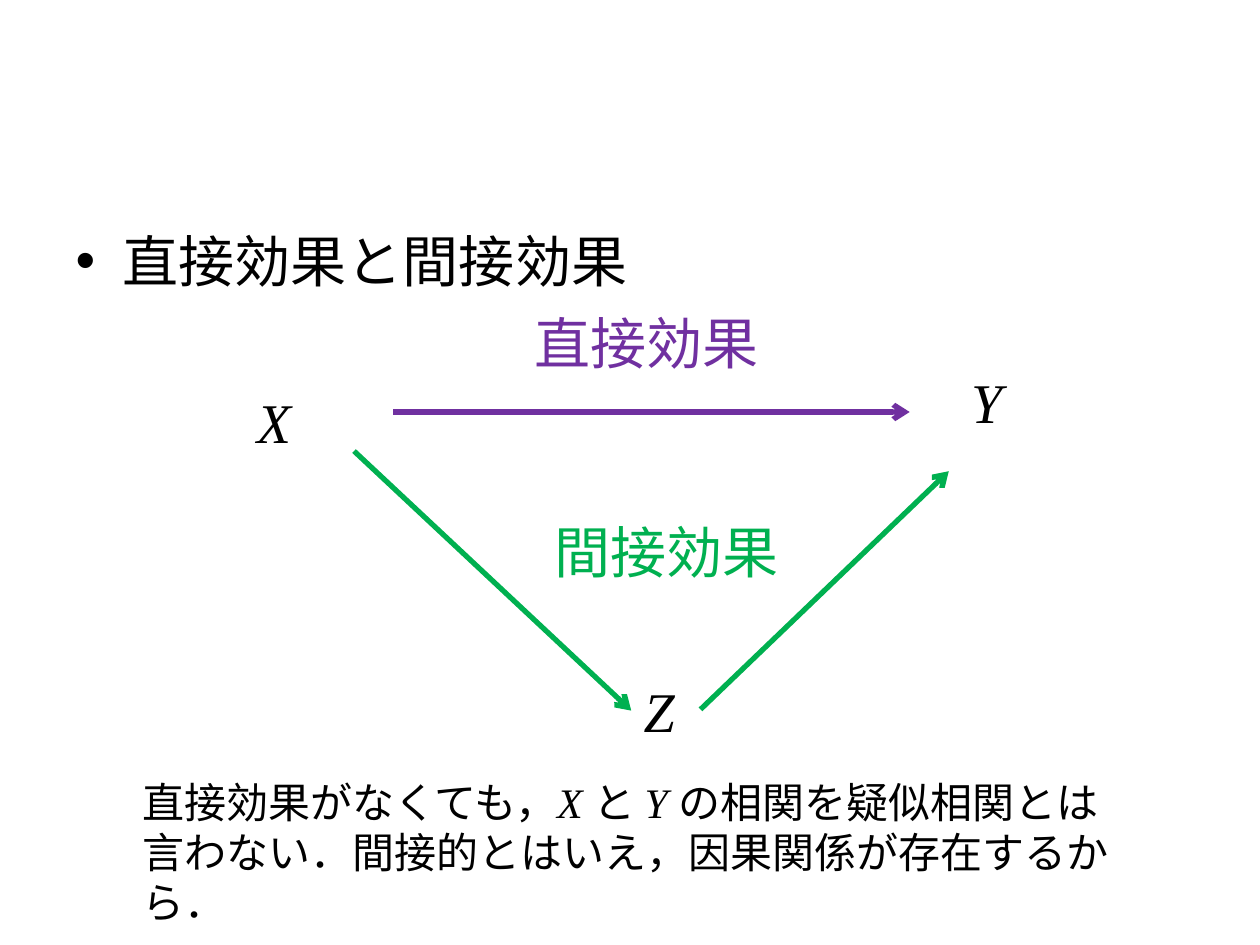
from lxml import etree
from pptx import Presentation
from pptx import util as u
from pptx.dml.color import RGBColor
from pptx.enum import shapes, text
from pptx.oxml.ns import qn

WIDTH, HEIGHT = 10, 7.5
BLACK, PURPLE, GREEN = "000000", "7030A0", "00B050"
SANS, SERIF = "Calibri", "Times New Roman"

HEADING = "直接効果と間接効果"
NODES = [("X", 1.94, 3.03, 0.48), ("Z", 5.01, 5.32, 0.45), ("Y", 7.61, 2.87, 0.45)]
EFFECTS = [("直接効果", 4.14, 2.4, PURPLE), ("間接効果", 4.3, 4.06, GREEN)]
ARROWS = [
    ((2.81, 3.58), (5.01, 5.64), GREEN),
    ((5.56, 5.63), (7.53, 3.74), GREEN),
    ((3.12, 3.27), (7.22, 3.27), PURPLE),
]
REMARK = [
    ("直接効果がなくても，", False),
    ("X ", True),
    ("と ", False),
    ("Y ", True),
    ("の相関を疑似相関とは言わない．間接的とはいえ，因果関係が存在するから．", False),
]


def rgb(value):
    """Turn a hex string into a colour."""
    return RGBColor.from_string(value)


def add_span(para, words, size=32, color=BLACK, variable=False):
    """Add a run; variables are set in italic serif."""
    span = para.add_run()
    span.text = words
    span.font.size = u.Pt(size)
    span.font.name = SERIF if variable else SANS
    span.font.italic = variable
    span.font.color.rgb = rgb(color)


def add_box(page, left, top, width, height, spans, wrap=False, **style):
    """Add a text box holding one paragraph of (words, variable) spans."""
    box = page.shapes.add_textbox(*map(u.Inches, (left, top, width, height)))
    box.text_frame.word_wrap = wrap
    box.text_frame.auto_size = text.MSO_AUTO_SIZE.SHAPE_TO_FIT_TEXT
    for words, variable in spans:
        add_span(box.text_frame.paragraphs[0], words, variable=variable, **style)


def add_arrow(page, start, end, color):
    """Add a straight line with an open arrowhead at its end."""
    arrow = page.shapes.add_connector(
        shapes.MSO_CONNECTOR.STRAIGHT, *map(u.Inches, start + end))
    arrow.line.color.rgb = rgb(color)
    arrow.line.width = u.Pt(3)
    etree.SubElement(arrow.line._get_or_add_ln(), qn("a:tailEnd"), type="arrow")
    etree.SubElement(arrow._element.spPr, qn("a:effectLst"))


def main():
    """Build the slide on direct and indirect effects."""
    deck = Presentation()
    deck.slide_width, deck.slide_height = u.Inches(WIDTH), u.Inches(HEIGHT)
    page = deck.slides.add_slide(deck.slide_layouts[1])
    title, body = page.placeholders
    title._element.getparent().remove(title._element)
    body.left, body.top, body.width, body.height = map(u.Inches, (0.5, 1.75, 9, 4.95))
    add_span(body.text_frame.paragraphs[0], HEADING)

    for start, end, color in ARROWS:
        add_arrow(page, start, end, color)
    for name, left, top, width in NODES:
        add_box(page, left, top, width, 0.64, [(name, True)])
    for label, left, top, color in EFFECTS:
        add_box(page, left, top, 2, 0.64, [(label, False)], color=color)
    add_box(page, 1.03, 6.11, 7.95, 0.91, REMARK, wrap=True, size=24)
    deck.save("out.pptx")


if __name__ == "__main__":
    main()
